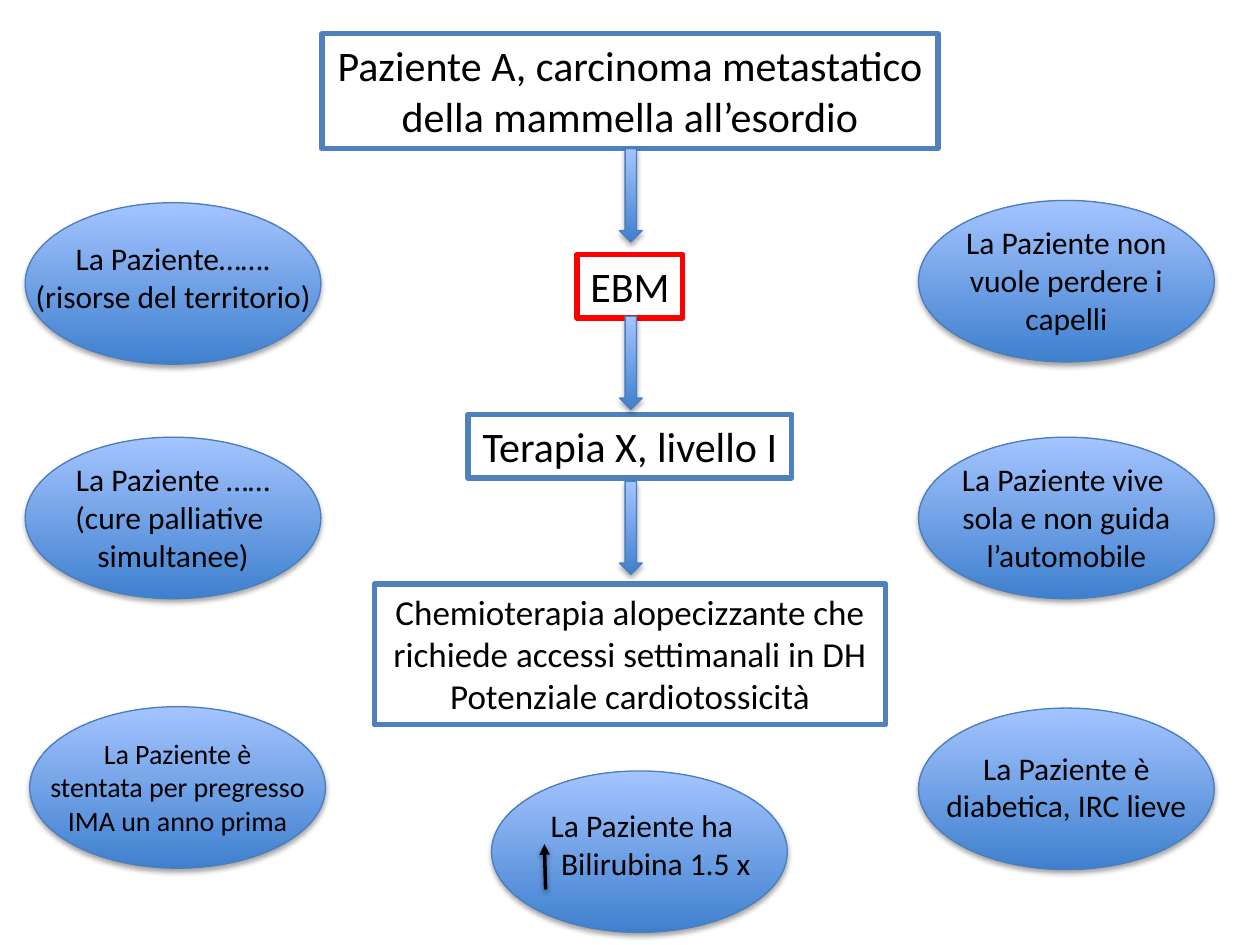
from dataclasses import dataclass

from lxml import etree
from pptx import Presentation
from pptx.dml.color import RGBColor
from pptx.enum import shapes, text
from pptx.oxml import ns
from pptx.util import Pt


@dataclass(frozen=True)
class Theme:
    font: str = "Calibri"
    ink: str = "000000"
    step_line: str = "4F81BD"
    evidence_line: str = "FF0000"
    fill_bottom: str = "3F80CE"
    fill_top: str = "A4C4FF"
    soft_line: str = "4B7EBC"
    step_size: int = 24
    detail_size: int = 20
    issue_size: int = 18
    small_size: int = 16


THEME = Theme()
CENTER = 360
ISSUE_W, ISSUE_H = 169, 92.3
ARROW_W, ARROW_H = 13, 53.3
LEFT, RIGHT = 98.9, 609.4


def rgb(value):
    return RGBColor.from_string(value)


def add_shadow(shape, distance, opacity):
    """Replace the theme effects with a soft shadow straight below."""
    props = shape._element.spPr
    effects = etree.SubElement(props, ns.qn("a:effectLst"))
    shadow = etree.SubElement(
        effects, ns.qn("a:outerShdw"), blurRad=str(Pt(3.1)),
        dist=str(Pt(distance)), dir="5400000", rotWithShape="0")
    color = etree.SubElement(shadow, ns.qn("a:srgbClr"), val=THEME.ink)
    etree.SubElement(color, ns.qn("a:alpha"), val=str(opacity * 1000))


def add_soft_shape(parent, preset, left, top, width, height):
    """Add a shape with the blue gradient, thin outline and shadow."""
    shape = parent.add_shape(preset, Pt(left), Pt(top), Pt(width), Pt(height))
    shape.fill.gradient()
    shape.fill.gradient_angle = 90
    bottom, top_stop = shape.fill.gradient_stops
    bottom.color.rgb, top_stop.color.rgb = rgb(THEME.fill_bottom), rgb(THEME.fill_top)
    shape.line.color.rgb = rgb(THEME.soft_line)
    shape.line.width = Pt(0.75)
    add_shadow(shape, 1.8, 35)
    return shape


def add_label(parent, center_x, center_y, width, lines, size):
    """Add centred lines in a box whose height follows from the lines."""
    height = len(lines) * size * 1.22 + 7.2
    label = parent.add_textbox(Pt(center_x - width / 2), Pt(center_y - height / 2),
                               Pt(width), Pt(height))
    frame = label.text_frame
    frame.word_wrap = False
    frame.auto_size = text.MSO_AUTO_SIZE.SHAPE_TO_FIT_TEXT
    for index, line in enumerate(lines):
        paragraph = frame.add_paragraph() if index else frame.paragraphs[0]
        paragraph.alignment = text.PP_ALIGN.CENTER
        run = paragraph.add_run()
        run.text = line
        run.font.name = THEME.font
        run.font.size = Pt(size)
        run.font.color.rgb = rgb(THEME.ink)
    return label


def add_step(parent, center_y, width, lines, size=THEME.step_size,
             outline=THEME.step_line):
    step = add_label(parent, CENTER, center_y, width, lines, size)
    step.line.color.rgb = rgb(outline)
    step.line.width = Pt(3)


def add_issue(parent, center_x, center_y, width, lines, size=THEME.issue_size,
              shift=(0, 0)):
    """Add an ellipse grouped with its label; shift moves the label only."""
    group = parent.add_group_shape()
    add_soft_shape(group.shapes, shapes.MSO_SHAPE.OVAL, center_x - ISSUE_W / 2,
                   center_y - ISSUE_H / 2, ISSUE_W, ISSUE_H)
    label = add_label(group.shapes, center_x + shift[0], center_y + shift[1],
                      width, lines, size)
    return group, label


def add_rise_arrow(parent, x, bottom, top):
    arrow = parent.add_connector(shapes.MSO_CONNECTOR.STRAIGHT,
                                 Pt(x), Pt(bottom), Pt(x - 0.7), Pt(top))
    arrow.line.color.rgb = rgb(THEME.ink)
    arrow.line.width = Pt(2)
    etree.SubElement(arrow.line._get_or_add_ln(), ns.qn("a:tailEnd"), type="triangle")
    add_shadow(arrow, 1.6, 38)


def main():
    deck = Presentation()
    deck.slide_width, deck.slide_height = Pt(720), Pt(540)
    canvas = deck.slides.add_slide(deck.slide_layouts[6]).shapes

    add_step(canvas, 52.2, 352, ["Paziente A, carcinoma metastatico",
                                 "della mammella all’esordio"])
    add_step(canvas, 163.5, 60.5, ["EBM"], outline=THEME.evidence_line)
    add_step(canvas, 254.9, 185, ["Terapia X, livello I"])
    add_step(canvas, 374, 292.3, ["Chemioterapia alopecizzante che",
                                  "richiede accessi settimanali in DH",
                                  "Potenziale cardiotossicità"], THEME.detail_size)

    add_issue(canvas, RIGHT, 160.7, 130.3,
              ["La Paziente non", "vuole perdere i", "capelli"])
    add_issue(canvas, RIGHT, 296, 136,
              ["La Paziente vive ", "sola e non guida", "l’automobile"])
    add_issue(canvas, RIGHT, 450.8, 153.4,
              ["La Paziente è", "diabetica, IRC lieve"], shift=(0, -1))
    add_issue(canvas, LEFT + 2.6, 450, 162,
              ["La Paziente è", "stentata per pregresso", "IMA un anno prima"],
              THEME.small_size)
    add_issue(canvas, LEFT, 296, 127.4,
              ["La Paziente ……", "(cure palliative ", "simultanee)"])
    add_issue(canvas, LEFT, 162, 173.5,
              ["La Paziente…….", "(risorse del territorio)"], shift=(0, -3.2))

    for top in (85, 180.7, 275):
        add_soft_shape(canvas, shapes.MSO_SHAPE.DOWN_ARROW, CENTER + 0.5 - ARROW_W / 2,
                       top, ARROW_W, ARROW_H)

    bilirubin, label = add_issue(canvas, 365.4, 486.7, 140.4,
                                 ["La Paziente ha", "Bilirubina 1.5 x"], shift=(1.4, -4))
    value_line = label.text_frame.paragraphs[1]
    value_line._p.get_or_add_pPr().set("marL", str(Pt(16)))
    add_rise_arrow(bilirubin.shapes, 311.8, 508.3, 482.4)

    deck.save("out.pptx")


if __name__ == "__main__":
    main()
